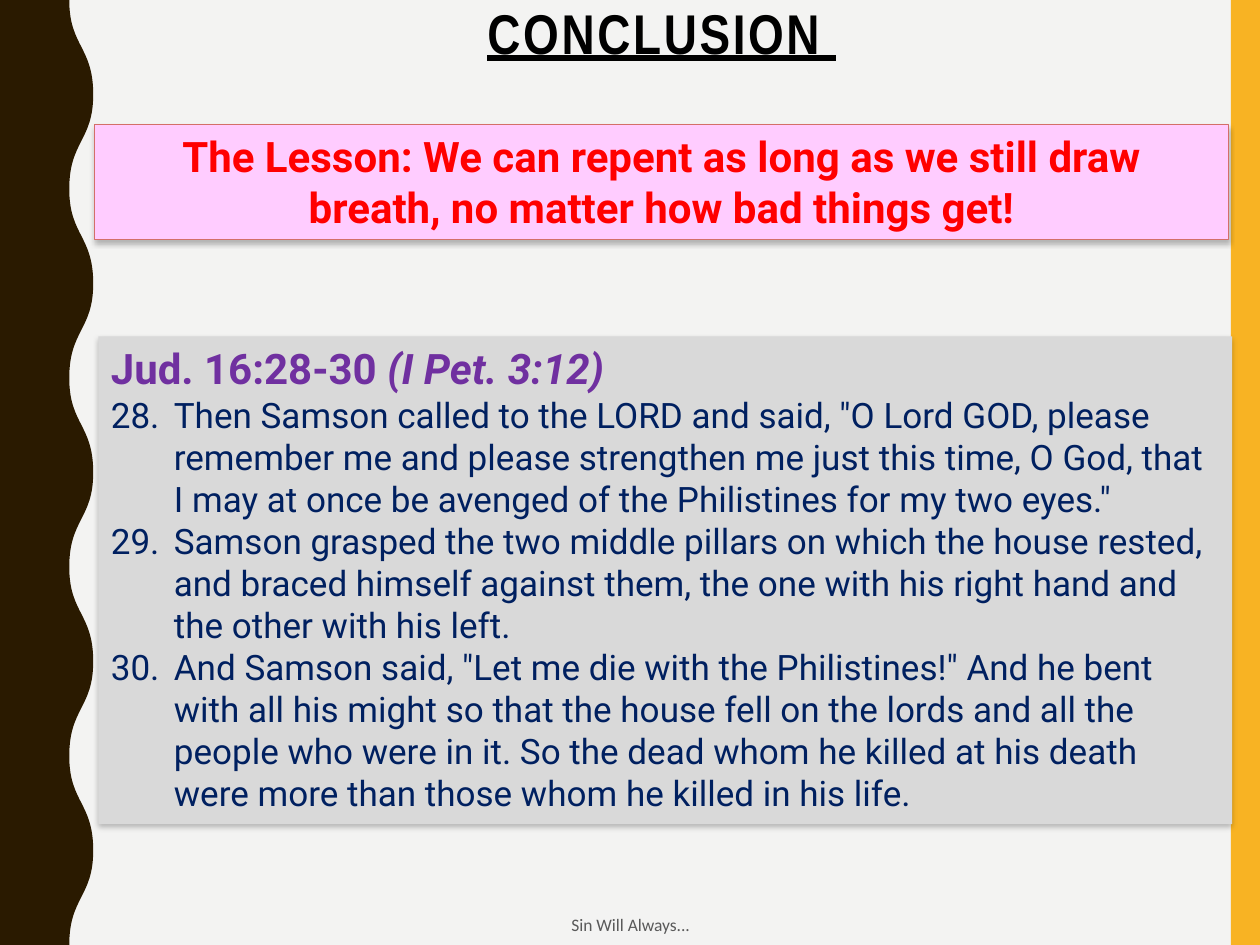
from dataclasses import dataclass

from lxml.etree import SubElement as Sub
from pptx import Presentation
from pptx.dml.color import RGBColor
from pptx.enum.shapes import MSO_SHAPE as Kind
from pptx.enum.text import MSO_ANCHOR as Anchor, MSO_AUTO_SIZE as Fit, PP_ALIGN as Align
from pptx.oxml.ns import qn
from pptx.util import Inches, Pt

WIDE, HIGH = 10, 7.5
HUES = {
    "page": "F3F3F2", "gold": "F8B323", "brown": "2A1A00", "black": "000000",
    "gray": "595959", "panel": "D9D9D9", "pink": "FFCCFF", "rose": "D36F68",
    "red": "FF0000", "purple": "7030A0", "navy": "002060",
}


@dataclass
class Box:
    left: float
    top: float
    width: float
    height: float

    def emu(self) -> list:
        return [Inches(v) for v in (self.left, self.top, self.width, self.height)]


@dataclass
class Style:
    face: str
    size: float
    hue: str
    bold: bool = False


TITLE = Box(0.75, 0, 9, 0.67)
LESSON = Box(0.75, 0.99, 9, 0.91)
VERSES = Box(0.78, 2.67, 9, 3.87)
FOOT = Box(3.42, 7.17, 3.17, 0.33)
STRIP = Box(9.77, 0, WIDE - 9.77, HIGH)

HEAD = Style("Roboto", 24, "purple", True)
VERSE = Style("Roboto", 20, "navy")

LESSON_LINES = [
    "The Lesson: We can repent as long as we still draw",
    "breath, no matter how bad things get!",
]
VERSE_LINES = [
    '28.\tThen Samson called to the LORD and said, "O Lord GOD, please remember me '
    'and please strengthen me just this time, O God, that I may at once be avenged '
    'of the Philistines for my two eyes."',
    "29.\tSamson grasped the two middle pillars on which the house rested, and braced "
    "himself against them, the one with his right hand and the other with his left.",
    '30.\tAnd Samson said, "Let me die with the Philistines!" And he bent with all '
    "his might so that the house fell on the lords and all the people who were in it. "
    "So the dead whom he killed at his death were more than those whom he killed in "
    "his life.",
]


def rgb(name: str) -> RGBColor:
    return RGBColor.from_string(HUES[name])


def paint(shape, fill: str, line: str = "") -> None:
    shape.shadow.inherit = False
    shape.fill.solid()
    shape.fill.fore_color.rgb = rgb(fill)
    if line:
        shape.line.color.rgb = rgb(line)
        shape.line.width = Pt(0.75)
    else:
        shape.line.fill.background()


def shade(shape) -> None:
    """Soft shadow straight below the shape."""
    drop = Sub(shape._element.spPr.find(qn("a:effectLst")), qn("a:outerShdw"),
               blurRad=str(Pt(3)), dist=str(Pt(2)), dir="5400000", rotWithShape="0")
    tint = Sub(drop, qn("a:srgbClr"), val=HUES["black"])
    Sub(tint, qn("a:alpha"), val="25000")


def place(shape, box: Box) -> None:
    shape.left, shape.top, shape.width, shape.height = box.emu()


def frame(shape, lines: list, anchor=Anchor.TOP):
    text = shape.text_frame
    text.text = "\n".join(lines)
    text.word_wrap = True
    text.auto_size = Fit.NONE
    text.vertical_anchor = anchor
    return text


def dress(para, style: Style, align=Align.LEFT) -> None:
    para.alignment = align
    para.space_before = Pt(0)
    for run in para.runs:
        font = run.font
        font.name, font.size, font.bold = style.face, Pt(style.size), style.bold
        font.color.rgb = rgb(style.hue)


def hang(para, depth: float) -> None:
    """Hanging indent without a bullet."""
    props = para._p.get_or_add_pPr()
    props.set("marL", str(Inches(depth)))
    props.set("indent", str(-Inches(depth)))
    Sub(props, qn("a:buNone"))


def wave(shapes, low: int, crest: int, turns: int):
    """Band on the left, in 1/100 inch, whose right edge swings from low to crest."""
    half = round(HIGH * 100 / turns)
    knots = [(crest if turn % 2 else low, turn * half) for turn in range(turns + 1)]
    pen = shapes.build_freeform(*knots[0], scale=Inches(0.01))
    pen.add_line_segments([*knots[1:], (0, turns * half), (0, 0)], close=True)
    shape = pen.convert_to_shape()

    # Bend each stretch between two knots into a curve
    lines = list(shape._element.iter(qn("a:lnTo")))
    for line, start, end in zip(lines, knots, knots[1:]):
        mid = (start[1] + end[1]) // 2
        line.tag = qn("a:cubicBezTo")
        line.remove(line[0])
        for x, y in ((start[0], mid), (end[0], mid), end):
            Sub(line, qn("a:pt"), x=str(x), y=str(y))
    return shape


def main() -> None:
    deck = Presentation()
    deck.slide_width, deck.slide_height = Inches(WIDE), Inches(HIGH)
    slide = deck.slides.add_slide(deck.slide_layouts[1])
    shapes = slide.shapes
    title, body = shapes.title, slide.placeholders[1]
    slide.background.fill.solid()
    slide.background.fill.fore_color.rgb = rgb("page")

    # Side bands, behind the text
    strip = shapes.add_shape(Kind.RECTANGLE, *STRIP.emu())
    paint(strip, "gold")
    band = wave(shapes, 55, 74, 10)
    paint(band, "brown")
    for holder in (title, body):
        shapes._spTree.append(holder._element)

    # Title
    place(title, TITLE)
    para = frame(title, ["CONCLUSION "]).paragraphs[0]
    dress(para, Style("Arial Narrow", 32, "black", True), Align.CENTER)
    para.line_spacing = 0.9
    para.runs[0].font.underline = True
    para.runs[0].font._element.set("spc", "150")

    # Bible verses
    place(body, VERSES)
    paint(body, "panel")
    shade(body)
    text = frame(body, ["Jud. 16:28-30 ", *VERSE_LINES])
    first, *rest = text.paragraphs
    aside = first.add_run()
    aside.text = "(I Pet. 3:12)"
    aside.font.italic = True
    dress(first, HEAD)
    for para in rest:
        dress(para, VERSE)
    for para in text.paragraphs:
        hang(para, 0.5)

    # Lesson
    lesson = shapes.add_shape(Kind.RECTANGLE, *LESSON.emu())
    paint(lesson, "pink", "rose")
    shade(lesson)
    for para in frame(lesson, LESSON_LINES).paragraphs:
        dress(para, Style("Roboto", 24, "red", True), Align.CENTER)

    # Footer
    foot = shapes.add_textbox(*FOOT.emu())
    para = frame(foot, ["Sin Will Always..."], Anchor.MIDDLE).paragraphs[0]
    dress(para, Style("Calibri", 10, "gray"), Align.CENTER)

    deck.save("out.pptx")


if __name__ == "__main__":
    main()
